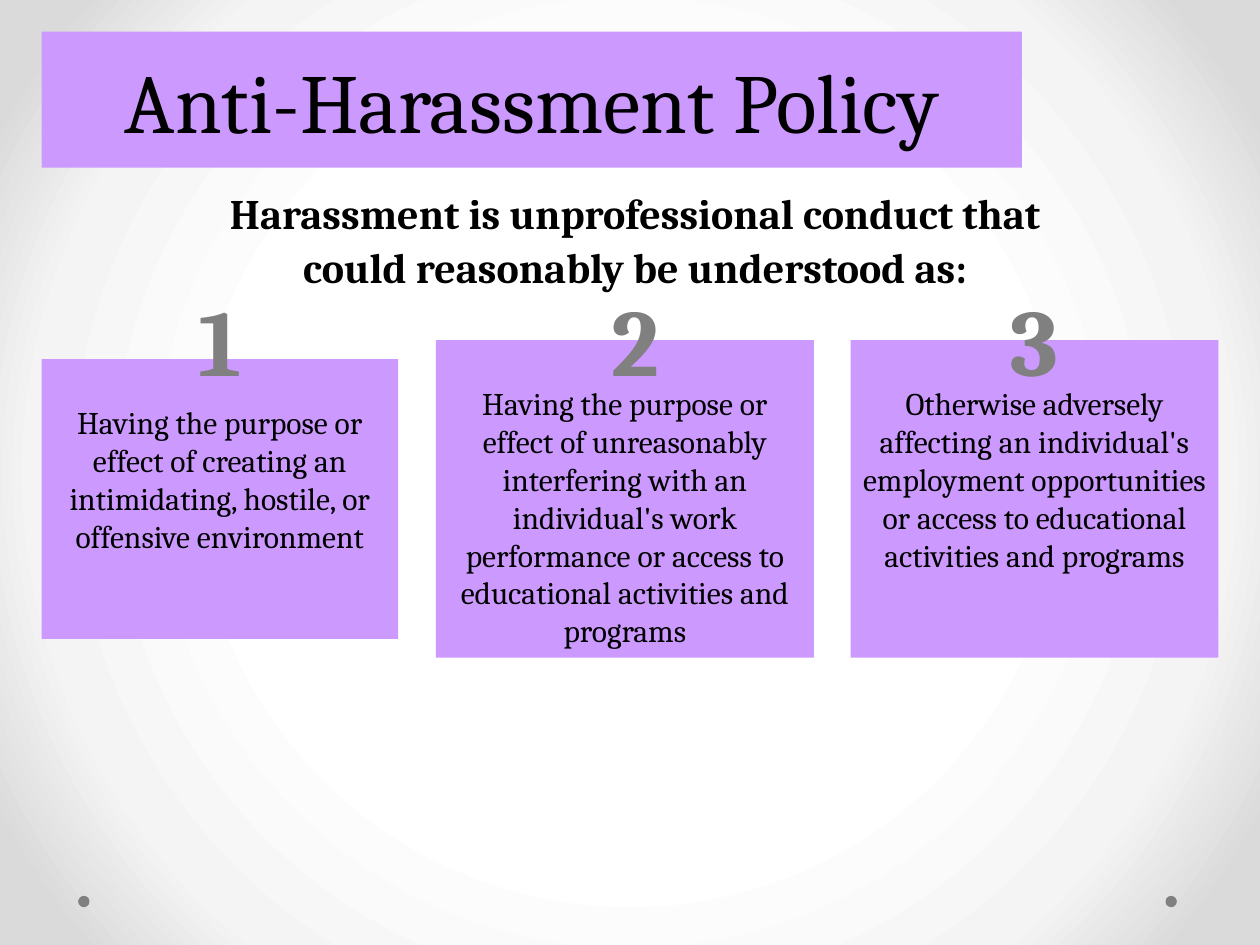
from lxml import etree
from pptx import Presentation
from pptx import util as u
from pptx.dml.color import RGBColor
from pptx.enum import shapes, text
from pptx.oxml import parse_xml
from pptx.oxml.ns import nsdecls, qn

PURPLE, GREY, BLACK = "CC99FF", "808080", "000000"


def colour(value):
    return RGBColor.from_string(value)


def write(frame, words, size=18, shade=BLACK, bold=False, spacing=None,
          anchor=text.MSO_ANCHOR.TOP, inset=0.05, wrap=True):
    frame.word_wrap = wrap
    frame.auto_size = text.MSO_AUTO_SIZE.NONE
    frame.vertical_anchor = anchor
    frame.margin_left = frame.margin_right = u.Inches(0.1)
    frame.margin_top, frame.margin_bottom = u.Inches(inset), u.Inches(0.05)
    para = frame.paragraphs[0]
    para.alignment = text.PP_ALIGN.CENTER
    para.line_spacing = spacing
    for index, line in enumerate(words.split("\n")):
        if index:
            para.add_line_break()
        span = para.add_run()
        span.text = line
        span.font.name = "Cambria"
        span.font.size = u.Pt(size)
        span.font.bold = bold
        span.font.color.rgb = colour(shade)


class PolicySlide:
    def __init__(self, deck):
        self.page = deck.slides.add_slide(deck.slide_layouts[5])

    def background(self, stops):
        """Radial gradient; stops are (percent, colour) pairs."""
        fill = self.page.background.fill
        fill.solid()
        fill.fore_color.rgb = colour("FFFFFF")
        solid = self.page.element.find(".//" + qn("p:bgPr")).find(qn("a:solidFill"))
        gradient = parse_xml(f'<a:gradFill {nsdecls("a")} rotWithShape="1"/>')
        stop_list = etree.SubElement(gradient, qn("a:gsLst"))
        for percent, value in stops:
            stop = etree.SubElement(stop_list, qn("a:gs"), pos=str(percent * 1000))
            etree.SubElement(stop, qn("a:srgbClr"), val=value)
        circle = etree.SubElement(gradient, qn("a:path"), path="circle")
        etree.SubElement(circle, qn("a:fillToRect"),
                         {side: "50000" for side in "ltrb"})
        solid.getparent().replace(solid, gradient)

    def title(self, words, left, top, width, height):
        box = self.page.shapes.title
        box.left, box.top = u.Inches(left), u.Inches(top)
        box.width, box.height = u.Inches(width), u.Inches(height)
        box.fill.solid()
        box.fill.fore_color.rgb = colour(PURPLE)
        write(box.text_frame, words, size=48, spacing=u.Pt(58),
              anchor=text.MSO_ANCHOR.MIDDLE)

    def shape(self, kind, fill, left, top, width, height):
        box = self.page.shapes.add_shape(
            kind, *map(u.Inches, (left, top, width, height)))
        box.shadow.inherit = False
        box.fill.solid()
        box.fill.fore_color.rgb = colour(fill)
        box.line.fill.background()
        return box

    def card(self, words, left, top, width, height):
        box = self.shape(shapes.MSO_SHAPE.RECTANGLE, PURPLE,
                         left, top, width, height)
        write(box.text_frame, words, inset=0.35)

    def dot(self, left):
        self.shape(shapes.MSO_SHAPE.OVAL, GREY, left, 7.11, 0.09, 0.09)

    def label(self, words, left, top, width, height, **style):
        box = self.page.shapes.add_textbox(
            *map(u.Inches, (left, top, width, height)))
        write(box.text_frame, words, **style)


def main():
    deck = Presentation()
    deck.slide_width, deck.slide_height = u.Inches(10), u.Inches(7.5)
    slide = PolicySlide(deck)

    # Backdrop
    slide.background([(50, "FFFFFF"), (76, "F4F4F4"), (92, "DADADA")])
    for left in (9.25, 0.62):
        slide.dot(left)

    # Heading and introduction
    slide.title("Anti-Harassment Policy", 0.33, 0.25, 7.78, 1.08)
    slide.label("Harassment is unprofessional conduct that\n"
                "could reasonably be understood as:",
                0.5, 1.38, 9.08, 1.61, size=24, bold=True, spacing=1.07, inset=0.08)

    # Cards: words, left, top, width, height, left of number
    cards = [
        ("Having the purpose or effect of creating an intimidating, hostile, "
         "or offensive environment", 0.33, 2.85, 2.83, 2.22, 1.46),
        ("Having the purpose or effect of unreasonably interfering with an "
         "individual's work performance or access to educational activities "
         "and programs", 3.46, 2.7, 3, 2.52, 4.75),
        ("Otherwise adversely affecting an individual's employment "
         "opportunities or access to educational activities and programs",
         6.75, 2.7, 2.92, 2.52, 7.92),
    ]
    for words, left, top, width, height, _ in cards:
        slide.card(words, left, top, width, height)

    # Numbers over the cards
    for number, card in enumerate(cards, 1):
        slide.label(str(number), card[-1], 2.19, 0.58, 1.01,
                    size=54, shade=GREY, bold=True, wrap=False)

    deck.save("out.pptx")


if __name__ == "__main__":
    main()
